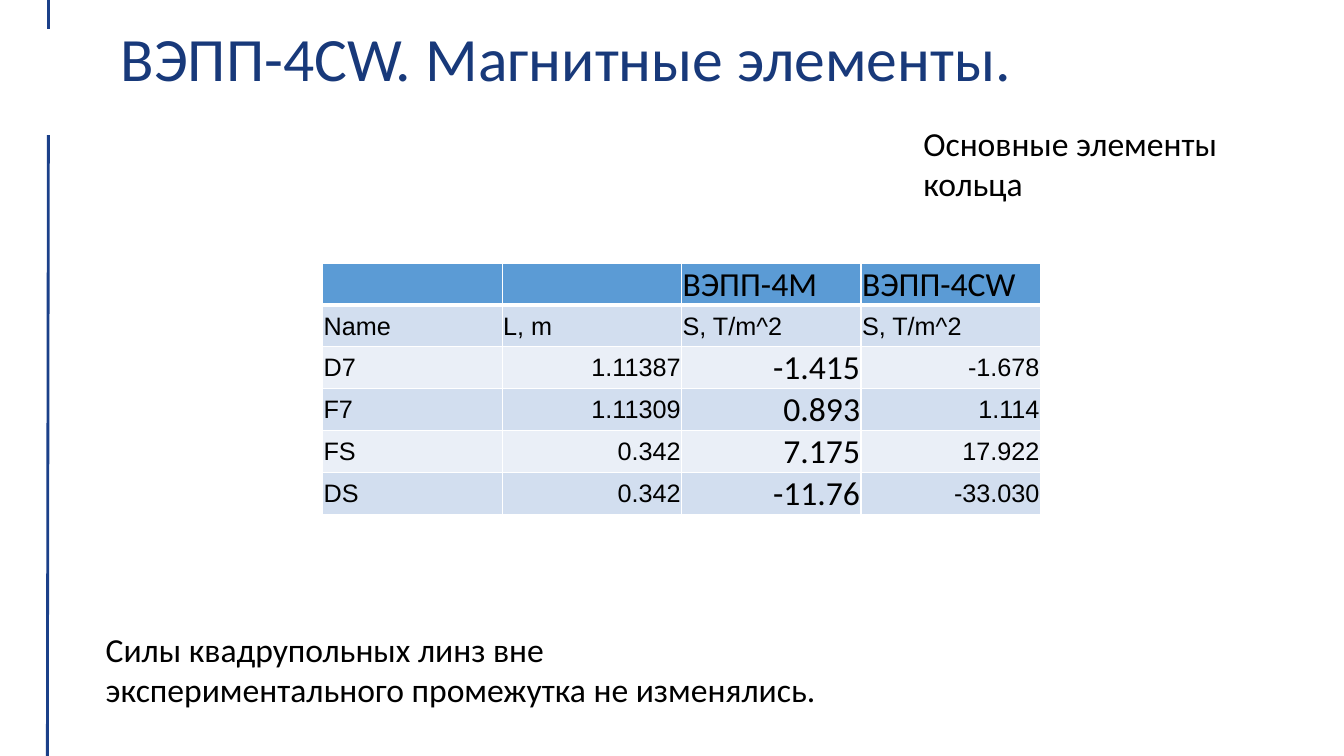
from dataclasses import dataclass

from lxml import etree
from pptx import Presentation
from pptx import util as u
from pptx.dml.color import RGBColor
from pptx.enum import shapes, text
from pptx.oxml import ns

WHITE = RGBColor(0xFF, 0xFF, 0xFF)
BLACK = RGBColor(0x00, 0x00, 0x00)
TITLE_BLUE = RGBColor(0x18, 0x39, 0x7A)
RULE_BLUE = RGBColor(0x1B, 0x40, 0x89)
HEADER_BLUE = RGBColor(0x5B, 0x9B, 0xD5)
BAND_DARK = RGBColor(0xD2, 0xDE, 0xEF)
BAND_LIGHT = RGBColor(0xEA, 0xEF, 0xF7)


@dataclass
class Rule:
    x1: float
    y1: float
    x2: float
    y2: float


@dataclass
class Caption:
    words: str
    left: float
    top: float
    width: float
    height: float
    size: int = 24
    color: RGBColor = BLACK
    anchor: text.MSO_ANCHOR = text.MSO_ANCHOR.TOP
    line_spacing: float = 1.0


RULES = [Rule(0.48, 1.34, 0.47, 7.5), Rule(0.48, 0, 0.48, 0.29)]

CAPTIONS = [
    Caption("ВЭПП-4CW. Магнитные элементы.", 1.1, 0.16, 11.5, 0.9,
            44, TITLE_BLUE, text.MSO_ANCHOR.MIDDLE, 0.9),
    Caption("Основные элементы кольца", 9.06, 1.17, 3.54, 0.91),
    Caption("Силы квадрупольных линз вне экспериментального промежутка "
            "не изменялись.", 0.95, 6.19, 7.43, 0.91),
]

MAGNETS = [
    ["", "", "ВЭПП-4M", "ВЭПП-4CW"],
    ["Name", "L, m", "S, T/m^2", "S, T/m^2"],
    ["D7", "1.11387", "-1.415", "-1.678"],
    ["F7", "1.11309", "0.893", "1.114"],
    ["FS", "0.342", "7.175", "17.922"],
    ["DS", "0.342", "-11.76", "-33.030"],
]
HEADER_ROW, FIRST_VALUE_ROW = 0, 2
NAME_COLUMN, OLD_RING_COLUMN = 0, 2
COLUMN_WIDTH, ROW_HEIGHT = 1.78, 0.41


def style_runs(paragraph, font_name: str, size: int, color: RGBColor) -> None:
    for run in paragraph.runs:
        run.font.name = font_name
        run.font.size = u.Pt(size)
        run.font.bold = False
        run.font.color.rgb = color


def draw_rule(slide, rule: Rule) -> None:
    connector = slide.shapes.add_connector(
        shapes.MSO_CONNECTOR.STRAIGHT, u.Inches(rule.x1), u.Inches(rule.y1),
        u.Inches(rule.x2), u.Inches(rule.y2))
    connector.line.color.rgb = RULE_BLUE
    connector.line.width = u.Pt(2)
    etree.SubElement(connector._element.spPr, ns.qn("a:effectLst"))


def draw_caption(slide, caption: Caption) -> None:
    box = slide.shapes.add_textbox(
        u.Inches(caption.left), u.Inches(caption.top),
        u.Inches(caption.width), u.Inches(caption.height))
    frame = box.text_frame
    frame.word_wrap = True
    frame.vertical_anchor = caption.anchor
    frame.text = caption.words
    paragraph = frame.paragraphs[0]
    paragraph.line_spacing = caption.line_spacing
    style_runs(paragraph, "Calibri", caption.size, caption.color)


def add_borders(cell, top: int, bottom: int) -> None:
    """Draw white borders, with widths in points; call before setting the fill."""
    properties = cell._tc.get_or_add_tcPr()
    for side, width in (("L", 1), ("R", 1), ("T", top), ("B", bottom)):
        border = etree.SubElement(properties, ns.qn(f"a:ln{side}"), w=str(u.Pt(width)))
        fill = etree.SubElement(border, ns.qn("a:solidFill"))
        etree.SubElement(fill, ns.qn("a:srgbClr"), val=str(WHITE))


def fill_cell(cell, row: int, column: int, words: str) -> None:
    is_header = row == HEADER_ROW
    is_value = row >= FIRST_VALUE_ROW and column != NAME_COLUMN
    is_large = is_header or (is_value and column == OLD_RING_COLUMN)

    add_borders(cell, top=3 if row == HEADER_ROW + 1 else 1,
                bottom=3 if is_header else 1)
    cell.fill.solid()
    band = BAND_DARK if row % 2 else BAND_LIGHT
    cell.fill.fore_color.rgb = HEADER_BLUE if is_header else band

    cell.margin_left = cell.margin_right = cell.margin_top = u.Inches(0.01)
    cell.margin_bottom = 0
    cell.vertical_anchor = text.MSO_ANCHOR.BOTTOM if is_large else text.MSO_ANCHOR.MIDDLE
    cell.text_frame.text = words
    paragraph = cell.text_frame.paragraphs[0]
    paragraph.alignment = text.PP_ALIGN.RIGHT if is_value else text.PP_ALIGN.LEFT
    style_runs(paragraph, "Calibri" if is_large else "Arial",
               24 if is_large else 18, BLACK)


def draw_magnet_table(slide) -> None:
    row_count, column_count = len(MAGNETS), len(MAGNETS[0])
    table = slide.shapes.add_table(
        row_count, column_count, u.Inches(3.2), u.Inches(2.61),
        u.Inches(COLUMN_WIDTH * column_count),
        u.Inches(ROW_HEIGHT * row_count)).table
    for table_row in table.rows:
        table_row.height = u.Inches(ROW_HEIGHT)
    for row, entries in enumerate(MAGNETS):
        for column, words in enumerate(entries):
            fill_cell(table.cell(row, column), row, column, words)


def main() -> None:
    deck = Presentation()
    deck.slide_width, deck.slide_height = u.Inches(13.33), u.Inches(7.5)
    slide = deck.slides.add_slide(deck.slide_layouts[6])
    for rule in RULES:
        draw_rule(slide, rule)
    draw_magnet_table(slide)
    for caption in CAPTIONS:
        draw_caption(slide, caption)
    deck.save("out.pptx")


if __name__ == "__main__":
    main()
